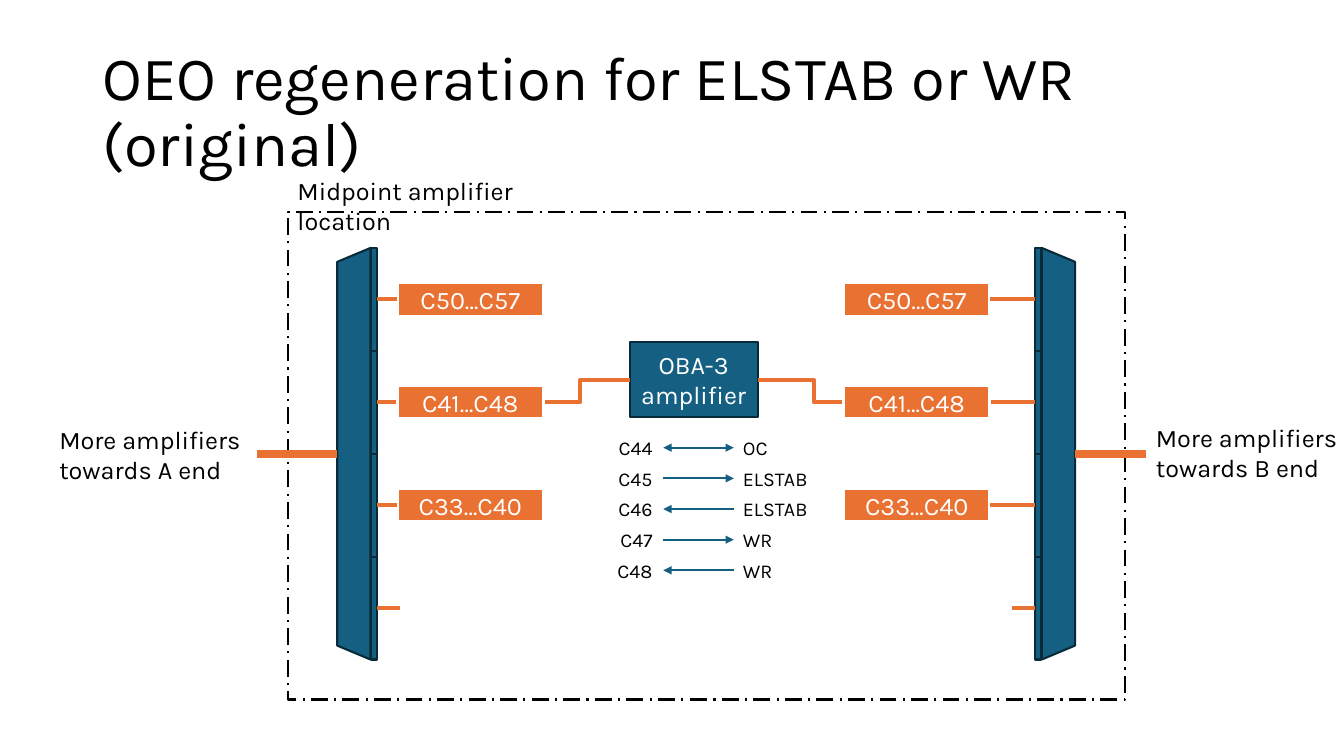
from dataclasses import dataclass

from lxml import etree
from pptx import Presentation
from pptx.dml.color import RGBColor
from pptx.enum import dml, shapes, text
from pptx.oxml import ns
from pptx.util import Pt


@dataclass
class Theme:
    font: str = "Karla"
    black: str = "000000"
    white: str = "FFFFFF"
    blue: str = "156082"
    navy: str = "092A39"
    orange: str = "E97132"
    title: int = 44
    body: int = 18
    small: int = 14


class Board:
    def __init__(self, slide, theme):
        self.slide, self.theme = slide, theme
        self.on = slide.shapes

    def group(self):
        self.on = self.slide.shapes.add_group_shape().shapes

    def ungroup(self):
        self.on = self.slide.shapes

    def fill_text(self, frame, words, size, color, align):
        frame.word_wrap = True
        para = frame.paragraphs[0]
        para.alignment = align
        run = para.add_run()
        run.text = words
        run.font.size = Pt(size)
        run.font.name = self.theme.font
        run.font.color.rgb = RGBColor.from_string(color)
        return para

    def title(self, words, x, y, w, h):
        head = self.slide.shapes.title
        head.left, head.top, head.width, head.height = map(Pt, (x, y, w, h))
        frame = head.text_frame
        frame.auto_size = text.MSO_AUTO_SIZE.NONE
        frame.vertical_anchor = text.MSO_ANCHOR.MIDDLE
        para = self.fill_text(frame, words, self.theme.title,
                              self.theme.black, text.PP_ALIGN.LEFT)
        para.line_spacing = 0.9

    def label(self, words, x, y, w, h, size, align=text.PP_ALIGN.LEFT):
        frame = self.on.add_textbox(*map(Pt, (x, y, w, h))).text_frame
        self.fill_text(frame, words, size, self.theme.black, align)

    def shape(self, x, y, w, h, fill, edge, width, words="",
              kind=shapes.MSO_SHAPE.RECTANGLE):
        item = self.on.add_shape(kind, *map(Pt, (x, y, w, h)))
        item.shadow.inherit = False
        if fill:
            item.fill.solid()
            item.fill.fore_color.rgb = RGBColor.from_string(fill)
        else:
            item.fill.background()
        item.line.color.rgb = RGBColor.from_string(edge)
        item.line.width = Pt(width)
        if words:
            item.text_frame.vertical_anchor = text.MSO_ANCHOR.MIDDLE
            self.fill_text(item.text_frame, words, self.theme.body,
                           self.theme.white, text.PP_ALIGN.CENTER)
        return item

    def line(self, start, end, color, width, ends=(), bend=None):
        kind = shapes.MSO_CONNECTOR.STRAIGHT
        if bend is not None:
            kind = shapes.MSO_CONNECTOR.ELBOW
        link = self.on.add_connector(kind, *map(Pt, start + end))
        link.line.color.rgb = RGBColor.from_string(color)
        link.line.width = Pt(width)
        props = link._element.spPr
        for tag in ends:
            etree.SubElement(props.find(ns.qn("a:ln")), ns.qn(tag), type="triangle")
        if bend is not None:
            guides = props.find(ns.qn("a:prstGeom")).get_or_add_avLst()
            etree.SubElement(guides, ns.qn("a:gd"), name="adj1",
                             fmla=f"val {round(bend * 100000)}")
        etree.SubElement(props, ns.qn("a:effectLst"))


TOP, STEP, SLOTS = 177.1, 73.5, 4    # port slots of each multiplexer
PORT, DEPTH = 4.3, 23.8
LEFT, RIGHT = 265, 739.4             # left edges of the port columns
TAG_W, TAG_H = 104.4, 23.8
ROWS = [TOP + STEP * (i + 0.5) for i in range(SLOTS)]
BANDS = ["C50…C57", "C41…C48", "C33…C40"]
HEAD, TAIL = "a:headEnd", "a:tailEnd"
LINKS = [
    ("C44", "OC", (HEAD, TAIL)),
    ("C45", "ELSTAB", (TAIL,)),
    ("C46", "ELSTAB", (HEAD,)),
    ("C47", "WR", (TAIL,)),
    ("C48", "WR", (HEAD,)),
]


def mux(board, port, mid, turn):
    """Trapezoid body with a column of ports."""
    t = board.theme
    span = STEP * SLOTS
    board.group()
    body = board.shape(mid - span / 2, TOP + (span - DEPTH) / 2, span, DEPTH,
                       t.blue, t.navy, 1.5, kind=shapes.MSO_SHAPE.TRAPEZOID)
    body.rotation = turn
    body.adjustments[0] = 0.419
    for i in range(SLOTS):
        board.shape(port, TOP + i * STEP, PORT, STEP, t.blue, t.navy, 1.5)
    board.ungroup()


def main():
    deck = Presentation()
    deck.slide_width, deck.slide_height = Pt(960), Pt(540)
    t = Theme()
    board = Board(deck.slides.add_slide(deck.slide_layouts[5]), t)
    board.title("OEO regeneration for ELSTAB or WR (original)", 66, 28.8, 828, 104.4)

    # Multiplexers and amplifier
    mux(board, LEFT, 252.8, 270)
    mux(board, RIGHT, 756, 90)
    board.shape(449.8, 244.6, 91.4, 53.4, t.blue, t.navy, 1.5, "OBA-3 amplifier")

    # Links from the amplifier to the second port on each side
    inner = LEFT + PORT
    board.line((inner, ROWS[1]), (449.8, 271.5), t.orange, 3, bend=0.805)
    board.line((541.2, 271.5), (RIGHT, ROWS[1]), t.orange, 3, bend=0.203)

    # Channel bands
    for x in (283.7, 602.6):
        for band, y in zip(BANDS, ROWS):
            board.shape(x, y - TAG_H / 2, TAG_W, TAG_H, t.orange, t.white, 2, band)

    # Short links at the other ports
    for i, near, far in ((0, 283.7, 707), (2, 283.7, 707), (3, 286, 723)):
        board.line((inner, ROWS[i]), (near, ROWS[i]), t.orange, 3)
        board.line((far, ROWS[i]), (RIGHT, ROWS[i]), t.orange, 3)

    # Site frame and trunk lines
    frame = board.shape(205.4, 151.2, 598.3, 348.5, None, t.black, 1.5)
    frame.line.dash_style = dml.MSO_LINE.LONG_DASH_DOT
    for x, end in ((183.8, 241), (767.6, 818.6)):
        board.line((x, 324.2), (end, 324.2), t.orange, 6)
    board.label("Midpoint amplifier location", 205.4, 121.7, 224.6, 29, t.body)
    board.label("More amplifiers towards B end", 818.6, 298.1, 152, 51, t.body)
    board.label("More amplifiers towards A end", 35.3, 299.5, 152, 51, t.body)

    # Channel directions
    for i, (name, use, ends) in enumerate(LINKS):
        y = 319.8 + 21.9 * i
        board.group()
        board.line((473.8, y), (524.2, y), t.blue, 1.5, ends)
        board.label(use, 523.6, y - 11.9, 69, 24.3, t.small)
        board.label(name, 425.7, y - 11.9, 47.5, 24.3, t.small, text.PP_ALIGN.RIGHT)
    board.ungroup()

    deck.save("out.pptx")


if __name__ == "__main__":
    main()
